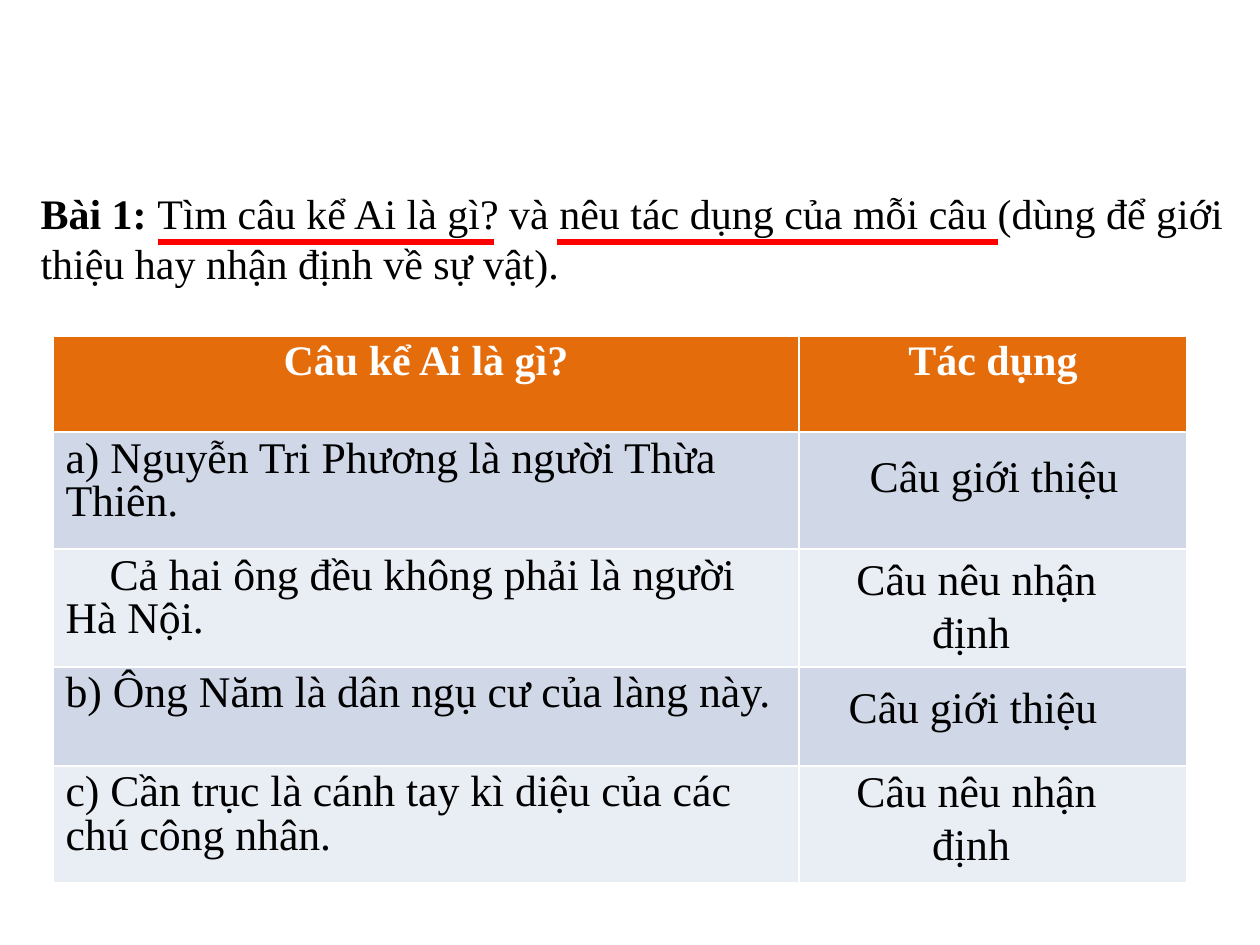
from pptx import Presentation
from pptx.dml.color import RGBColor
from pptx.enum.shapes import MSO_CONNECTOR
from pptx.enum.text import MSO_ANCHOR, MSO_AUTO_SIZE, PP_ALIGN
from pptx.oxml.ns import qn
from pptx.util import Emu, Pt
from lxml import etree

STRAIGHT = MSO_CONNECTOR.STRAIGHT
TOP = MSO_ANCHOR.TOP
GROW = MSO_AUTO_SIZE.SHAPE_TO_FIT_TEXT
LEFT, CENTER = PP_ALIGN.LEFT, PP_ALIGN.CENTER
FONT = "Times New Roman"
COLORS = {
    "text": "000000",
    "header text": "FFFFFF",
    "header": "E46C0A",
    "odd row": "D0D8E8",
    "even row": "E9EDF4",
    "underline": "FF0000",
}


def px(length):
    return Emu(round(length * 914400 / 126))


def add_span(para, text, size, color="text", bold=False, align=LEFT, indent=0):
    para.alignment = align
    if indent:
        para._p.get_or_add_pPr().set("indent", str(px(indent)))
    span = para.add_run()
    span.text = text
    for name, value in {"name": FONT, "size": Pt(size), "bold": bold}.items():
        setattr(span.font, name, value)
    span.font.color.rgb = RGBColor.from_string(COLORS[color])


deck = Presentation()
deck.slide_width, deck.slide_height = px(1260), px(945)
page = deck.slides.add_slide(deck.slide_layouts[5])

# Exercise statement
title = page.shapes.title
title.left, title.top, title.width, title.height = px(28), px(181), px(1239), px(115)
frame = title.text_frame
for name, value in {"word_wrap": True, "auto_size": GROW, "vertical_anchor": TOP}.items():
    setattr(frame, name, value)
add_span(frame.paragraphs[0], "Bài 1: ", 24, bold=True)
add_span(
    frame.paragraphs[0],
    "Tìm câu kể Ai là gì? và nêu tác dụng của mỗi câu "
    "(dùng để giới thiệu hay nhận định về sự vật).",
    24,
)

# Table of sentences: text and first-line indent
sentences = [
    ("a) Nguyễn Tri Phương là người Thừa Thiên.", 0),
    ("Cả hai ông đều không phải là người Hà Nội.", 44),
    ("b) Ông Năm là dân ngụ cư của làng này.", 0),
    ("c) Cần trục là cánh tay kì diệu của các chú công nhân.", 0),
]
table = page.shapes.add_table(5, 2, px(53), px(336), px(1134), px(547)).table
for column, width in zip(table.columns, (746, 388)):
    column.width = px(width)
for row, height in zip(table.rows, (96, 117, 118, 99, 117)):
    row.height = px(height)

for cell, heading in zip(table.rows[0].cells, ("Câu kể Ai là gì?", "Tác dụng")):
    add_span(cell.text_frame.paragraphs[0], heading, 24, "header text", True, CENTER)
for number, (sentence, indent) in enumerate(sentences, 1):
    para = table.cell(number, 0).text_frame.paragraphs[0]
    add_span(para, sentence, 25, indent=indent)

for number, row in enumerate(table.rows):
    fill = "header" if number == 0 else "odd row" if number % 2 else "even row"
    for cell in row.cells:
        cell.fill.solid()
        cell.fill.fore_color.rgb = RGBColor.from_string(COLORS[fill])
        cell.text_frame.paragraphs[0].line_spacing = 0.9

# Answers over the second column
answers = [
    ("Câu giới thiệu", 826, 443, 336, 149, 0),
    ("Câu giới thiệu", 805, 674, 336, 149, 0),
    ("Câu nêu nhận định", 798, 546, 346, 186, 11),
    ("Câu nêu nhận định", 798, 758, 346, 186, 11),
]
for answer, left, top, width, height, indent in answers:
    box = page.shapes.add_textbox(px(left), px(top), px(width), px(height))
    box.text_frame.word_wrap = True
    box.text_frame.auto_size = GROW
    add_span(box.text_frame.paragraphs[0], answer, 25, align=CENTER, indent=indent)

# Underlines of the key phrases
for start, end in ((557, 998), (158, 494)):
    underline = page.shapes.add_connector(STRAIGHT, px(start), px(242), px(end), px(242))
    underline.line.color.rgb = RGBColor.from_string(COLORS["underline"])
    underline.line.width = Pt(3)
    etree.SubElement(underline._element.spPr, qn("a:effectLst"))

deck.save("out.pptx")
